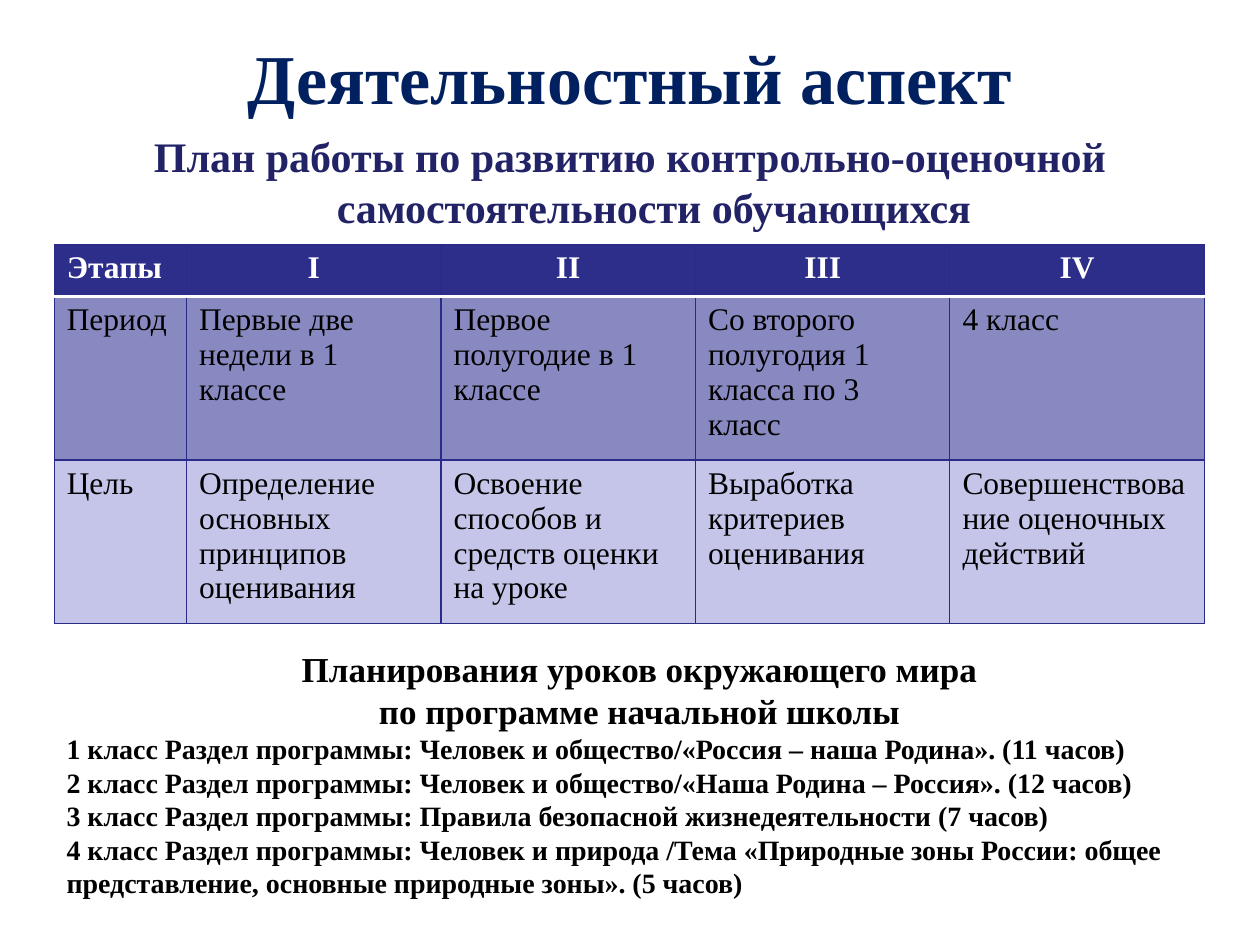
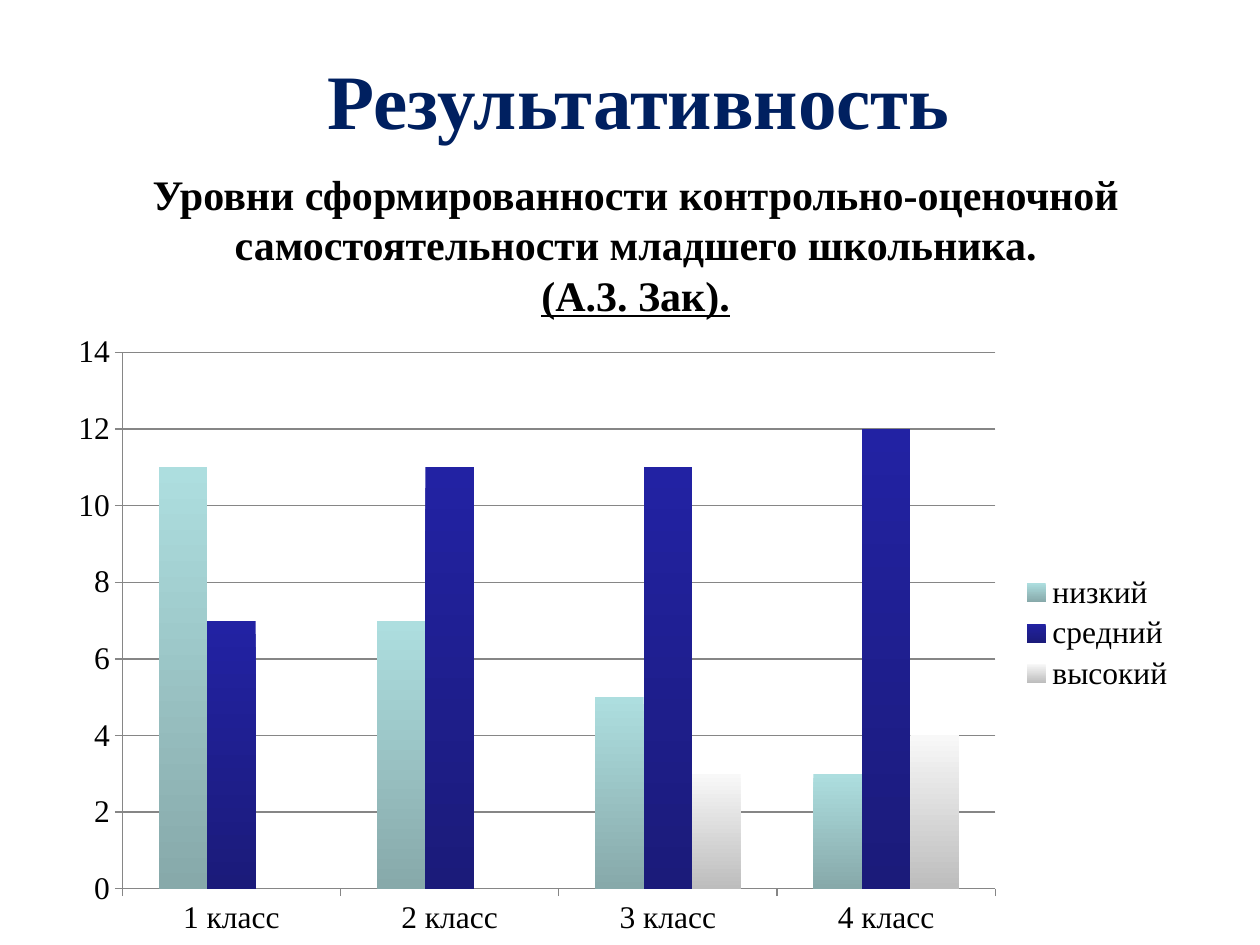
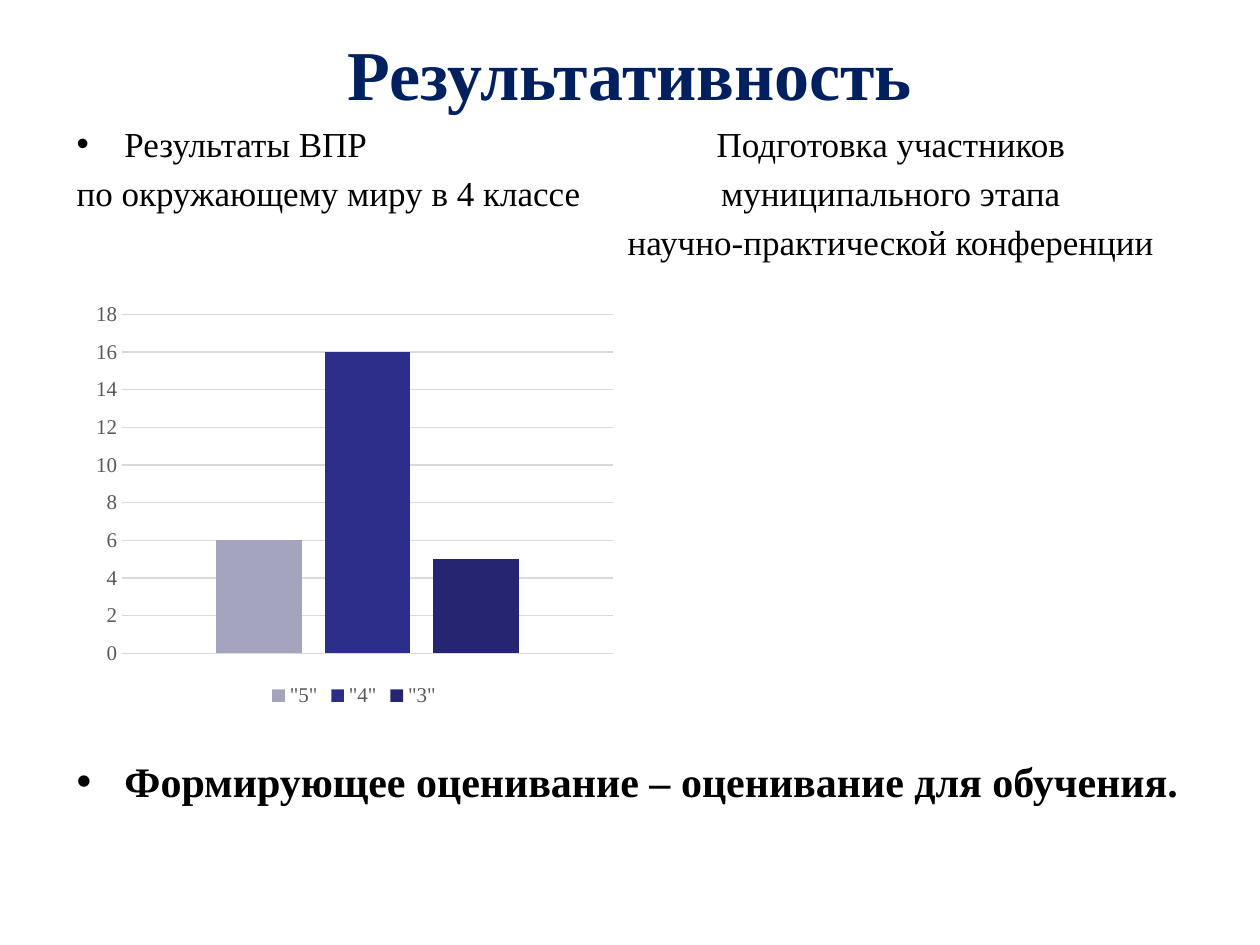
from pptx import Presentation
from pptx.chart.data import CategoryChartData
from pptx.dml.color import RGBColor
from pptx.enum.chart import XL_CHART_TYPE, XL_LEGEND_POSITION, XL_TICK_MARK
from pptx.enum.text import MSO_ANCHOR, PP_ALIGN
from pptx.oxml import parse_xml
from pptx.oxml.ns import nsdecls, qn
from pptx.util import Inches, Pt

CENTER, LEFT = PP_ALIGN.CENTER, PP_ALIGN.LEFT
TOP, MIDDLE = MSO_ANCHOR.TOP, MSO_ANCHOR.MIDDLE
COLUMNS = XL_CHART_TYPE.COLUMN_CLUSTERED
LEGEND_RIGHT, LEGEND_BOTTOM = XL_LEGEND_POSITION.RIGHT, XL_LEGEND_POSITION.BOTTOM
TICK_OUT, TICK_NONE = XL_TICK_MARK.OUTSIDE, XL_TICK_MARK.NONE

FONT = "Times New Roman"
LINE_FACTOR = 1.2
HANG = 0.38
C = {
    "title": "002060", "subtitle": "222267", "text": "000000", "white": "FFFFFF",
    "header": "2D2D8A", "row_dark": "8989C1", "row_light": "C5C5E9", "border": "2A2A89",
    "axis": "868686", "grid": "D9D9D9", "label": "595959",
    "low": "ADDEDF", "low_end": "87A9AA", "mid": "2222A3", "mid_end": "1B1B7A",
    "high": "F8F8F8", "high_end": "BDBDBD",
    "five": "A4A4BE", "four": "2D2D8A", "three": "252572",
}


def rgb(name):
    return RGBColor.from_string(C[name])


def set_font(font, size, color="text", **fmt):
    font.name, font.size = FONT, Pt(size)
    font.color.rgb = rgb(color)
    for key, value in fmt.items():
        setattr(font, key, value)


def set_hang(p, bullet):
    """Give a paragraph a hanging indent, with a bullet if asked."""
    pPr = p._p.get_or_add_pPr()
    pPr.set("marL", str(Inches(HANG)))
    pPr.set("indent", str(-Inches(HANG)))
    if bullet:
        pPr.append(parse_xml(f'<a:buFont {nsdecls("a")} typeface="Arial"/>'))
        pPr.append(parse_xml(f'<a:buChar {nsdecls("a")} char="•"/>'))


def add_text(s, box, paras, size, align=CENTER, anchor=TOP, before=0, wrap=True, **base):
    """Write paragraphs given as strings or as (string, format) pairs."""
    tf = s.shapes.add_textbox(*map(Inches, box)).text_frame
    tf.word_wrap, tf.vertical_anchor = wrap, anchor
    for i, para in enumerate(paras):
        text, own = (para, {}) if isinstance(para, str) else para
        fmt = {"size": size, "align": align, "hang": False, "bullet": False, **base, **own}
        p = tf.paragraphs[0] if i == 0 else tf.add_paragraph()
        p.alignment = fmt.pop("align")
        hang, bullet = fmt.pop("hang"), fmt.pop("bullet")
        if hang or bullet:
            set_hang(p, bullet)
        p.line_spacing = Pt(fmt["size"] * LINE_FACTOR)
        if i and before:
            p.space_before = Pt(before)
        r = p.add_run()
        r.text = text
        set_font(r.font, **fmt)


def add_title(s, box, text, size=40, wrap=True):
    add_text(s, box, [text], size, anchor=MIDDLE, wrap=wrap, color="title", bold=True)


def set_border(cell, side, color, width):
    ln = parse_xml(
        f'<a:{side} {nsdecls("a")} w="{Pt(width)}"><a:solidFill>'
        f'<a:srgbClr val="{C[color]}"/></a:solidFill></a:{side}>')
    tcPr = cell._tc.get_or_add_tcPr()
    tcPr.insert(len(tcPr.findall("*")) - 1, ln)  # borders stand before the fill


def add_stage_table(s, box, rows, widths, heights):
    table = s.shapes.add_table(len(rows), len(widths), *map(Inches, box)).table
    table.horz_banding = False
    for column, width in zip(table.columns, widths):
        column.width = Inches(width)
    fills = ["header", "row_dark", "row_light"]
    for i, row in enumerate(rows):
        table.rows[i].height = Inches(heights[i])
        for j, text in enumerate(row):
            cell = table.cell(i, j)
            cell.fill.solid()
            cell.fill.fore_color.rgb = rgb(fills[i])
            for side in ("lnL", "lnR", "lnT", "lnB"):
                under_header = (i, side) in ((0, "lnB"), (1, "lnT"))
                set_border(cell, side, *(("white", 2) if under_header else ("border", 0.75)))
            p = cell.text_frame.paragraphs[0]
            p.alignment = CENTER if i == 0 and j else LEFT
            r = p.add_run()
            r.text = text
            set_font(r.font, 18, "text" if i else "white", bold=i == 0)


def set_plot_layout(chart, frame):
    """Place the inner plot area by fractions of the chart."""
    area = chart._chartSpace.chart.plotArea
    for old in area.findall(qn("c:layout")):
        area.remove(old)
    parts = "".join(f'<c:{k} val="{v}"/>' for k, v in zip("xywh", frame))
    area.insert(0, parse_xml(
        f'<c:layout {nsdecls("c")}><c:manualLayout><c:layoutTarget val="inner"/>'
        f'<c:xMode val="edge"/><c:yMode val="edge"/>{parts}</c:manualLayout></c:layout>'))


def add_columns(s, box, cats, series, frame, top, legend, size, color, grid, gap, overlap):
    """Series are (name, values, colour) triples; a colour pair makes a gradient."""
    data = CategoryChartData()
    data.categories = cats
    for name, values, _ in series:
        data.add_series(name, values)
    chart = s.shapes.add_chart(COLUMNS, *map(Inches, box), data).chart
    chart.has_title = False
    set_font(chart.font, size, color)
    set_plot_layout(chart, frame)
    chart.has_legend = True
    chart.legend.position = legend
    chart.legend.include_in_layout = False

    axis = chart.value_axis
    axis.minimum_scale, axis.maximum_scale, axis.major_unit = 0, top, 2
    axis.has_major_gridlines = True
    axis.major_gridlines.format.line.color.rgb = rgb(grid)
    axis.major_gridlines.format.line.width = Pt(0.75)

    plot = chart.plots[0]
    plot.gap_width, plot.overlap, plot.vary_by_categories = gap, overlap, False
    for ser, (_, _, fill) in zip(plot.series, series):
        if isinstance(fill, tuple):
            ser.format.fill.gradient()
            ser.format.fill.gradient_angle = 270
            for stop, name in zip(ser.format.fill.gradient_stops, fill):
                stop.color.rgb = rgb(name)
        else:
            ser.format.fill.solid()
            ser.format.fill.fore_color.rgb = rgb(fill)
    return chart


def plan_slide(s):
    add_title(s, (0.5, 0.3, 9, 0.61), "Деятельностный аспект")
    add_text(s, (0.5, 0.99, 9, 0.9),
             ["План работы по развитию контрольно-оценочной самостоятельности обучающихся"],
             24, hang=True, color="subtitle", bold=True)
    rows = [
        ["Этапы", "I", "II", "III", "IV"],
        ["Период", "Первые две недели в 1 классе", "Первое полугодие в 1 классе",
         "Со второго полугодия 1 класса по 3 класс", "4 класс"],
        ["Цель", "Определение основных принципов оценивания",
         "Освоение способов и средств оценки на уроке",
         "Выработка критериев оценивания", "Совершенствование оценочных действий"],
    ]
    add_stage_table(s, (0.43, 1.94, 9.13, 2.83), rows, [1.05] + [2.02] * 4, [0.41, 1.21, 1.21])
    heading = {"size": 20, "align": CENTER}
    add_text(s, (0.43, 5.09, 9.29, 2.2), [
        ("Планирования уроков окружающего мира", heading),
        ("по программе начальной школы", heading),
        "1 класс Раздел программы: Человек и общество/«Россия – наша Родина». (11 часов)",
        "2 класс Раздел программы: Человек и общество/«Наша Родина – Россия». (12 часов)",
        "3 класс Раздел программы: Правила безопасной жизнедеятельности (7 часов)",
        "4 класс Раздел программы: Человек и природа /Тема «Природные зоны России: общее "
        "представление, основные природные зоны». (5 часов)",
    ], 16, align=LEFT, bold=True)


def levels_slide(s):
    add_text(s, (0.51, 1.31, 9.07, 1.25), [
        "Уровни сформированности контрольно-оценочной самостоятельности младшего школьника.",
        ("(А.3. Зак).", {"underline": True}),
    ], 24, anchor=MIDDLE, bold=True)
    series = [
        ("низкий", [11, 7, 5, 3], ("low", "low_end")),
        ("средний", [7, 11, 11, 12], ("mid", "mid_end")),
        ("высокий", [None, None, 3, 4], ("high", "high_end")),
    ]
    chart = add_columns(s, (0.43, 2.55, 9, 4.95), [f"{n} класс" for n in range(1, 5)], series,
                        (0.06, 0.05, 0.77, 0.86), 14, LEGEND_RIGHT, 18, "text", "axis", 150, 0)
    for axis in (chart.category_axis, chart.value_axis):
        axis.major_tick_mark = TICK_OUT
        axis.format.line.color.rgb = rgb("axis")
    add_title(s, (2.48, 0.36, 5.18, 0.84), "Результативность", 44, wrap=False)


def results_slide(s):
    add_title(s, (0.5, 0.27, 9, 0.61), "Результативность")
    add_text(s, (0.51, 0.92, 4.4, 0.85), [
        ("Результаты ВПР", {"bullet": True}),
        ("по окружающему миру в 4 классе", {"hang": True}),
    ], 20, align=LEFT, before=4)
    add_text(s, (4.8, 0.92, 4.54, 1.25), [
        "Подготовка участников", "муниципального этапа", "научно-практической конференции",
    ], 20, before=4)
    series = [('"5"', [6], "five"), ('"4"', [16], "four"), ('"3"', [5], "three")]
    chart = add_columns(s, (0.67, 2.33, 4.28, 3.32), ["1"], series, (0.07, 0.05, 0.91, 0.81),
                        18, LEGEND_BOTTOM, 12, "label", "grid", 219, -27)
    chart.category_axis.visible = False
    chart.value_axis.major_tick_mark = TICK_NONE
    chart.value_axis.format.line.fill.background()
    add_text(s, (0.51, 5.95, 9, 0.6), ["Формирующее оценивание – оценивание для обучения."],
             24, align=LEFT, bullet=True, bold=True)


def main():
    prs = Presentation()
    prs.slide_width, prs.slide_height = Inches(10), Inches(7.5)
    for build in (plan_slide, levels_slide, results_slide):
        build(prs.slides.add_slide(prs.slide_layouts[6]))
    prs.save("out.pptx")


if __name__ == "__main__":
    main()
